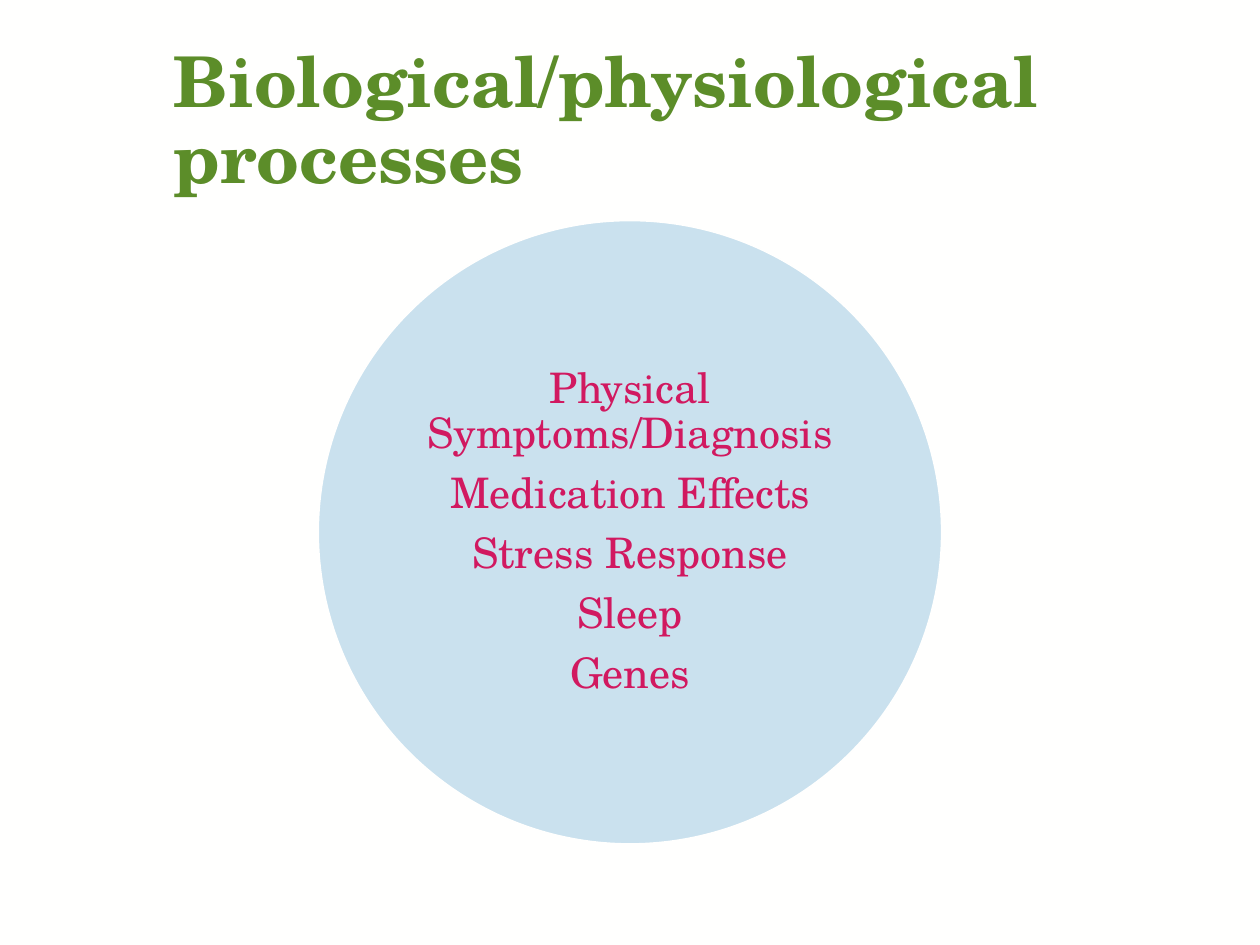
import pptx
import pptx.dml.color
import pptx.enum.shapes
import pptx.enum.text
import pptx.oxml.xmlchemy
import pptx.util
from lxml import etree
from pptx.oxml.ns import qn

Cm = pptx.util.Cm
Pt = pptx.util.Pt
RGBColor = pptx.dml.color.RGBColor
Align = pptx.enum.text.PP_ALIGN

PAPER = RGBColor(0xFF, 0xFF, 0xFE)
GREEN = RGBColor(0x5C, 0x8D, 0x29)
BLUE = RGBColor(0x97, 0xC5, 0xDF)
PINK = RGBColor(0xD1, 0x19, 0x60)

FACE = "TeX Gyre Schola"
TITLE = "Biological/physiological processes"
ITEMS = ["Physical Symptoms/Diagnosis", "Medication Effects",
         "Stress Response", "Sleep", "Genes"]

MID_X, MID_Y = 12.7, 10.73  # centre of the circle and its list
DISC = 12.57
LIST = 8.89

TITLE_FONT = {"name": FACE, "size": Pt(40), "bold": True}
LIST_FONT = {"name": FACE, "size": Pt(24), "bold": False}
TITLE_PARA = {"alignment": Align.LEFT, "line_spacing": 0.9,
              "space_before": Pt(0)}
LIST_PARA = {"alignment": Align.CENTER, "line_spacing": 0.9,
             "space_before": Pt(0), "space_after": Pt(8.4)}
FRAME = {"word_wrap": True,
         "auto_size": pptx.enum.text.MSO_AUTO_SIZE.NONE,
         "vertical_anchor": pptx.enum.text.MSO_ANCHOR.MIDDLE}
FLUSH = dict.fromkeys(
    ["margin_left", "margin_top", "margin_right", "margin_bottom"], 0)


def apply(item, values):
    for key, value in values.items():
        setattr(item, key, value)


def place(shape, left, top, width, height):
    apply(shape, {"left": Cm(left), "top": Cm(top),
                  "width": Cm(width), "height": Cm(height)})


def square(size):
    """Box of the given size around the shared centre."""
    return MID_X - size / 2, MID_Y - size / 2, size, size


def write(shape, lines, frame, para, font, color):
    text = shape.text_frame
    apply(text, frame)
    text.text = "\n".join(lines)
    for par in text.paragraphs:
        apply(par, para)
        apply(par.font, font)
        par.font.color.rgb = color


def unmark(shape):
    """Take bullets and indents off a list."""
    for par in shape.text_frame.paragraphs:
        props = par._p.get_or_add_pPr()
        props.set("marL", "0")
        props.set("indent", "0")
        mark = etree.SubElement(props, qn("a:buNone"))
        fonts = props.find(qn("a:defRPr"))
        if fonts is not None:
            fonts.addprevious(mark)


def add_disc(slide):
    disc = slide.shapes.add_shape(
        pptx.enum.shapes.MSO_SHAPE.OVAL, *map(Cm, square(DISC)))
    disc.shadow.inherit = False
    disc.fill.solid()
    disc.fill.fore_color.rgb = BLUE
    tint = disc.fill._xPr.find(".//" + qn("a:srgbClr"))
    etree.SubElement(tint, qn("a:alpha")).set("val", "50000")
    disc.line.color.rgb = PAPER
    disc.line.width = Pt(1)
    # Behind the placeholders
    slide.shapes._spTree.insert(2, disc._element)


def main():
    deck = pptx.Presentation()
    deck.slide_width, deck.slide_height = Cm(25.4), Cm(19.05)
    slide = deck.slides.add_slide(deck.slide_layouts[1])
    slide.background.fill.solid()
    slide.background.fill.fore_color.rgb = PAPER

    # Title
    title = slide.shapes.title
    place(title, 3.25, 0.89, 20.85, 3.18)
    write(title, [TITLE], FRAME, TITLE_PARA, TITLE_FONT, GREEN)

    # Circle with the list on it
    add_disc(slide)
    body = slide.placeholders[1]
    place(body, *square(LIST))
    write(body, ITEMS, FRAME | FLUSH, LIST_PARA, LIST_FONT, PINK)
    unmark(body)

    deck.save("out.pptx")


if __name__ == "__main__":
    main()
